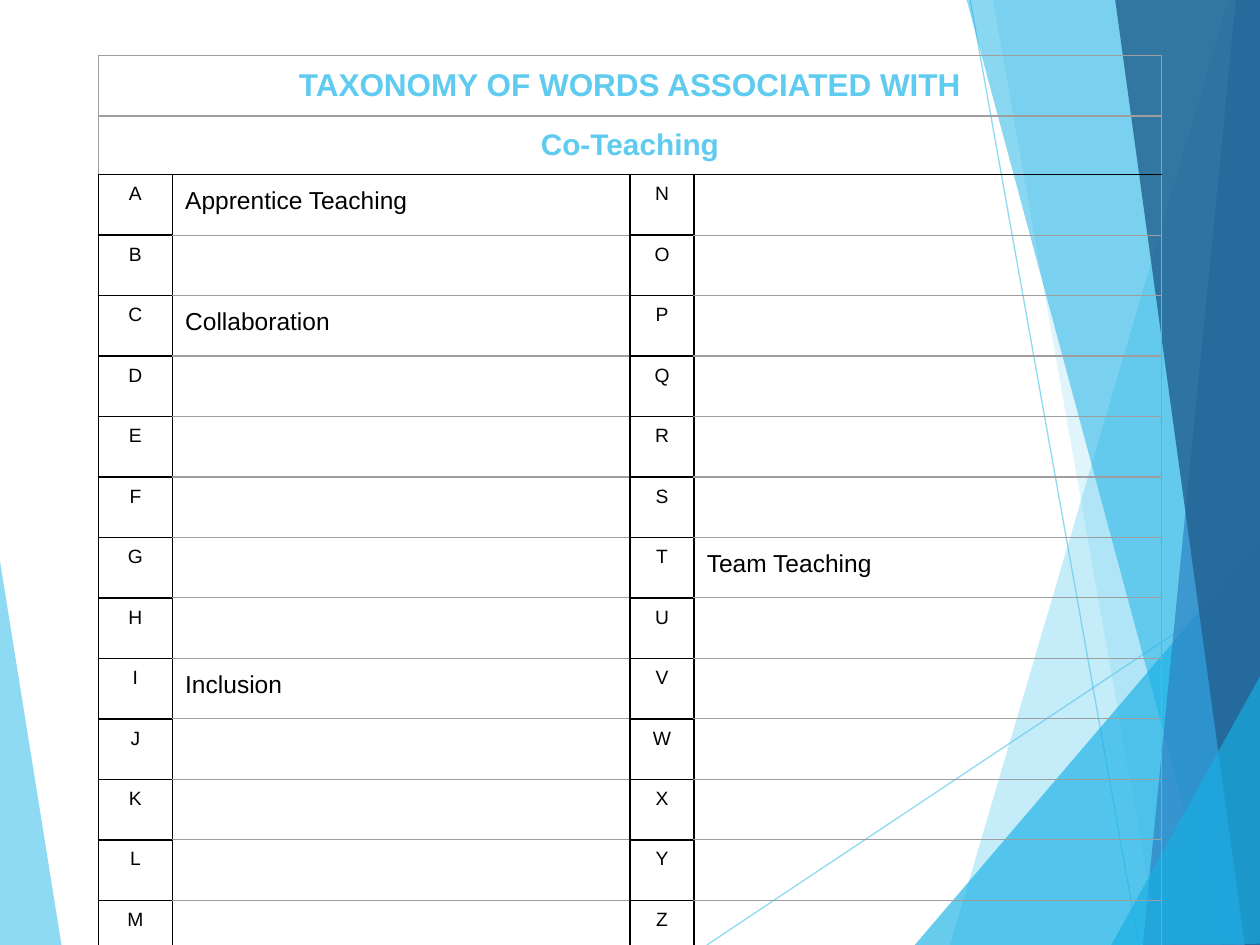
from dataclasses import dataclass

from lxml.etree import SubElement
from pptx import Presentation
from pptx.dml.color import RGBColor
from pptx.enum.shapes import MSO_CONNECTOR as Connector
from pptx.enum.text import PP_ALIGN as Align
from pptx.oxml.ns import qn
from pptx.util import Inches, Pt


@dataclass(frozen=True)
class Theme:
    font: str = "Arial"
    sky: str = "5FCBEF"
    cyan: str = "17B0E4"
    blue: str = "2E83C3"
    navy: str = "236292"
    black: str = "000000"
    gray: str = "9E9E9E"
    title_size: int = 18
    topic_size: int = 17
    word_size: int = 14
    letter_size: int = 11
    thin: float = 0.75
    thick: float = 1


THEME = Theme()

FACETS = [
    (THEME.sky, 70, [(-0.01, 4.39), (0.49, 7.51), (-0.01, 7.5)]),
    (THEME.sky, 36, [(9.75, 0), (7.54, 7.5), (10.02, 7.51), (10.01, 0.01)]),
    (THEME.sky, 20, [(7.88, -0.01), (9.2, 7.5), (10.01, 7.5), (10.01, -0.01)]),
    (THEME.cyan, 65, [(7.26, 7.5), (10, 4.29), (10.01, 7.5)]),
    (THEME.cyan, 50, [(7.67, -0.01), (9.69, 7.5), (10.01, 7.49), (10.01, -0.01)]),
    (THEME.blue, 70, [(9.81, -0.01), (9.07, 7.5), (10.01, 7.5), (10, -0.01)]),
    (THEME.navy, 82, [(8.85, -0.01), (9.88, 7.5), (10.02, 7.5), (10, -0.01)]),
    (THEME.cyan, 65, [(8.82, 7.5), (10.01, 5.35), (10.02, 7.49)]),
]
RAYS = [((5.61, 7.5), (10.01, 4.57)), ((7.7, 0), (9.04, 7.5))]

HEADINGS = [
    ("TAXONOMY OF WORDS ASSOCIATED WITH", THEME.title_size),
    ("Co-Teaching", THEME.topic_size),
]
LETTER_COLUMNS = ["ABCDEFGHIJKLM", "NOPQRSTUVWXYZ"]
WORDS = {
    "A": "Apprentice Teaching",
    "C": "Collaboration",
    "I": "Inclusion",
    "T": "Team Teaching",
}
COLUMN_WIDTHS = [0.59, 3.63, 0.51, 3.71]
ROW_HEIGHT = 0.48
GRAY_RULE = (THEME.gray, THEME.thin)
BLACK_RULE = (THEME.black, THEME.thick)


def set_opacity(fill, percent):
    color = fill._xPr.find(qn("a:solidFill"))[0]
    SubElement(color, qn("a:alpha")).set("val", str(percent * 1000))


def add_facet(slide, color, opacity, corners):
    start, *others = [(Inches(x), Inches(y)) for x, y in corners]
    outline = slide.shapes.build_freeform(*start)
    outline.add_line_segments(others, close=True)
    facet = outline.convert_to_shape()
    facet.shadow.inherit = False
    facet.fill.solid()
    facet.fill.fore_color.rgb = RGBColor.from_string(color)
    set_opacity(facet.fill, opacity)
    facet.line.fill.background()


def add_ray(slide, start, end):
    ends = [Inches(value) for value in start + end]
    ray = slide.shapes.add_connector(Connector.STRAIGHT, *ends)
    ray.line.width = Pt(THEME.thin)
    ray.line.color.rgb = RGBColor.from_string(THEME.sky)
    set_opacity(ray.line.fill, 70)
    SubElement(ray._element.spPr, qn("a:effectLst"))


def style_cell(cell, left, right, top, bottom):
    properties = cell._tc.get_or_add_tcPr()
    for side, (color, width) in zip("LRTB", (left, right, top, bottom)):
        border = SubElement(properties, qn(f"a:ln{side}"), w=str(Pt(width)))
        solid = SubElement(border, qn("a:solidFill"))
        SubElement(solid, qn("a:srgbClr"), val=color)
    cell.fill.background()


def write_cell(cell, text, size, color, inset, align=Align.LEFT, bold=False):
    cell.margin_left = cell.margin_right = Inches(inset)
    cell.margin_top = cell.margin_bottom = Inches(inset)
    paragraph = cell.text_frame.paragraphs[0]
    paragraph.alignment = align
    run = paragraph.add_run()
    run.text = text
    run.font.name = THEME.font
    run.font.size = Pt(size)
    run.font.bold = bold
    run.font.color.rgb = RGBColor.from_string(color)


def add_headings(table):
    last_column = len(COLUMN_WIDTHS) - 1
    for row, (heading, size) in enumerate(HEADINGS):
        bottom = BLACK_RULE if row == len(HEADINGS) - 1 else GRAY_RULE
        for column in range(last_column + 1):
            style_cell(table.cell(row, column), GRAY_RULE, GRAY_RULE, GRAY_RULE, bottom)
        banner = table.cell(row, 0)
        banner.merge(table.cell(row, last_column))
        write_cell(banner, heading, size, THEME.sky, 0.1, Align.CENTER, True)


def add_letters(table, letters, column, outer_rule):
    for row, letter in enumerate(letters, start=len(HEADINGS)):
        letter_cell = table.cell(row, column)
        style_cell(letter_cell, BLACK_RULE, BLACK_RULE, BLACK_RULE, BLACK_RULE)
        write_cell(letter_cell, letter, THEME.letter_size, THEME.black, 0.07, Align.CENTER)
        word_cell = table.cell(row, column + 1)
        style_cell(word_cell, BLACK_RULE, outer_rule, GRAY_RULE, GRAY_RULE)
        if letter in WORDS:
            write_cell(word_cell, WORDS[letter], THEME.word_size, THEME.black, 0.1)


def add_taxonomy(slide):
    row_count = len(HEADINGS) + len(LETTER_COLUMNS[0])
    frame = slide.shapes.add_table(
        row_count, len(COLUMN_WIDTHS), Inches(0.78), Inches(0.44),
        Inches(sum(COLUMN_WIDTHS)), Inches(row_count * ROW_HEIGHT),
    )
    table = frame.table
    table.first_row = table.horz_banding = False
    for column, width in zip(table.columns, COLUMN_WIDTHS):
        column.width = Inches(width)
    for row in table.rows:
        row.height = Inches(ROW_HEIGHT)
    table.rows[1].height = Inches(0.46)
    add_headings(table)
    for index, (letters, rule) in enumerate(zip(LETTER_COLUMNS, (BLACK_RULE, GRAY_RULE))):
        add_letters(table, letters, 2 * index, rule)


def main():
    deck = Presentation()
    deck.slide_width, deck.slide_height = Inches(10), Inches(7.5)
    slide = deck.slides.add_slide(deck.slide_layouts[6])
    left_facet, *right_facets = FACETS
    add_facet(slide, *left_facet)
    for start, end in RAYS:
        add_ray(slide, start, end)
    for facet in right_facets:
        add_facet(slide, *facet)
    add_taxonomy(slide)
    deck.save("out.pptx")


if __name__ == "__main__":
    main()
